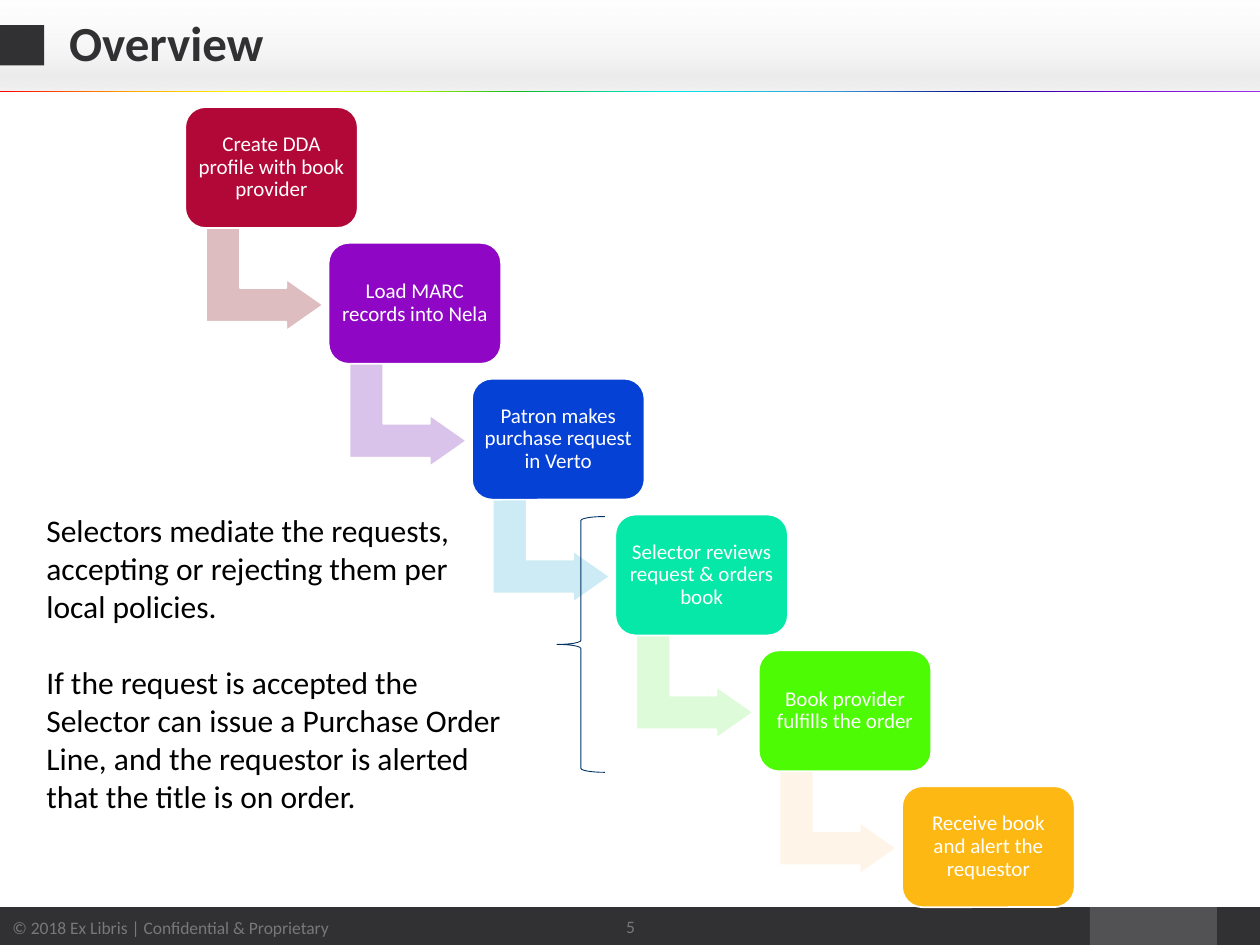
from lxml import etree
from pptx import Presentation
from pptx.dml.color import RGBColor
from pptx.enum.shapes import MSO_SHAPE as Shape
from pptx.enum.text import MSO_ANCHOR as Anchor, PP_ALIGN as Align
from pptx.oxml import parse_xml
from pptx.oxml.ns import nsdecls, qn
from pptx.util import Inches, Pt

FONT = "Calibri"
DARK, GREY, WHITE = "313133", "787878", "FFFFFF"
HEADER_STOPS = [(0, "FAFAFA", 12), (66, "D7D7D7", 30), (83, "D7D7D7", 47), (100, "E4E4E4", 54)]
RAINBOW = [(0, "A22DE8"), (12, "7200D1"), (22, "000086"), (34, "399CDB"), (47, "00E9E8"),
           (59, "11B920"), (68, "B1F900"), (80, "FFFF00"), (89, "FFAB00"), (100, "FF0000")]
RAINBOW_STOPS = [(place, tone, 100) for place, tone in RAINBOW]
STEPS = [
    ("Create DDA profile with book provider", "B20837", "DDBDBF"),
    ("Load MARC records into Nela", "8F07C4", "D9C3EA"),
    ("Patron makes purchase request in Verto", "0641D6", "CCEBF4"),
    ("Selector reviews request & orders book", "05E8A7", "DDFBD9"),
    ("Book provider fulfills the order", "4CFB04", "FFF4E8"),
    ("Receive book and alert the requestor", "FDB813", None),
]
NOTES = [
    "Selectors mediate the requests, accepting or rejecting them per local policies.",
    "If the request is accepted the Selector can issue a Purchase Order Line, "
    "and the requestor is alerted that the title is on order.",
]


def color(hex_string):
    return RGBColor.from_string(hex_string)


def add_shape(page, kind, box, fill=None, line=None, width=1):
    shape = page.shapes.add_shape(kind, *map(Inches, box))
    shape.shadow.inherit = False
    if fill:
        shape.fill.solid()
        shape.fill.fore_color.rgb = color(fill)
    else:
        shape.fill.background()
    if line:
        shape.line.color.rgb = color(line)
        shape.line.width = Pt(width)
    else:
        shape.line.fill.background()
    return shape


def add_gradient(page, box, stops, angle):
    shape = add_shape(page, Shape.RECTANGLE, box)
    gradient = parse_xml(f'<a:gradFill rotWithShape="1" {nsdecls("a")}><a:gsLst/>'
                         f'<a:lin ang="{angle * 60000}" scaled="0"/></a:gradFill>')
    for place, tone, opacity in stops:
        stop = etree.SubElement(gradient[0], qn("a:gs"), pos=str(place * 1000))
        rgb = etree.SubElement(stop, qn("a:srgbClr"), val=tone)
        if opacity < 100:
            etree.SubElement(rgb, qn("a:alpha"), val=str(opacity * 1000))
    properties = shape.fill._xPr
    properties.replace(properties.find(qn("a:noFill")), gradient)


def write(shape, paragraphs, size, tone, align=Align.LEFT, anchor=Anchor.MIDDLE,
          bold=False, spacing=None, gap=0):
    frame = shape.text_frame
    frame.word_wrap = True
    frame.vertical_anchor = anchor
    frame.text = "\n".join(paragraphs)
    for index, para in enumerate(frame.paragraphs):
        para.alignment = align
        if spacing:
            para.line_spacing = spacing
        if index:
            para.space_before = Pt(gap)
        for span in para.runs:
            span.font.name = FONT
            span.font.size = Pt(size)
            span.font.bold = bold
            span.font.color.rgb = color(tone)


def add_header(page, left, top, width, height):
    add_gradient(page, (left, top, width, height), HEADER_STOPS, 90)
    add_shape(page, Shape.RECTANGLE, (left, top + 0.2, 0.35, 0.32), DARK)
    add_gradient(page, (left, top + height, width, 0.01), RAINBOW_STOPS, 180)
    title = page.shapes.add_textbox(*map(Inches, (left + 0.45, top + 0.02, 9.06, 0.69)))
    write(title, ["Overview"], 28, DARK, bold=True, spacing=0.9)


def add_footer(page, left, top, width, height):
    bar = add_shape(page, Shape.RECTANGLE, (left, top, 8.65, height), DARK)
    write(bar, ["© 2018 Ex Libris | Confidential & Proprietary"], 10, GREY)
    add_shape(page, Shape.RECTANGLE, (left + 8.65, top, 1.01, height), "525254")
    add_shape(page, Shape.RECTANGLE, (left + 9.66, top, width - 9.66, height), DARK)
    number = page.shapes.add_textbox(*map(Inches, (left + 4.42, top - 0.04, 1.17, 0.39)))
    write(number, ["5"], 10, GREY, align=Align.CENTER)


def add_staircase(page, left, top, width, height):
    box_width, box_height = 1.37, 0.96
    across = (width - box_width) / (len(STEPS) - 1)
    down = (height - box_height) / (len(STEPS) - 1)
    for index, (label, fill, arrow_fill) in enumerate(STEPS):
        x, y = left + index * across, top + index * down
        if arrow_fill:
            arrow = add_shape(page, Shape.BENT_UP_ARROW, (x + 0.22, y + 0.9, 0.82, 0.93),
                              arrow_fill, WHITE)
            arrow.rotation = 90
            for place, value in enumerate((0.328, 0.25, 0.358)):
                arrow.adjustments[place] = value
        step = add_shape(page, Shape.ROUNDED_RECTANGLE, (x, y, box_width, box_height), fill, WHITE)
        frame = step.text_frame
        frame.margin_left = frame.margin_right = Inches(0.05)
        frame.margin_top = frame.margin_bottom = Inches(0.05)
        write(step, [label], 12, WHITE, align=Align.CENTER, spacing=0.9)


def add_notes_text(page, left, top, width, height):
    box = page.shapes.add_textbox(*map(Inches, (left, top, width, height)))
    write(box, NOTES, 18, "000000", anchor=Anchor.TOP, gap=22)


def main():
    deck = Presentation()
    deck.slide_width, deck.slide_height = Inches(10), Inches(7.5)
    page = deck.slides.add_slide(deck.slide_layouts[6])
    add_header(page, 0, 0, 10, 0.72)
    add_footer(page, 0, 7.2, 10, 0.32)
    add_staircase(page, 1.47, 0.85, 7.06, 6.35)
    add_shape(page, Shape.LEFT_BRACE, (4.42, 4.1, 0.38, 2.03), line="003466", width=0.5)
    add_notes_text(page, 0.27, 4.01, 3.9, 2.83)
    deck.save("out.pptx")


if __name__ == "__main__":
    main()
